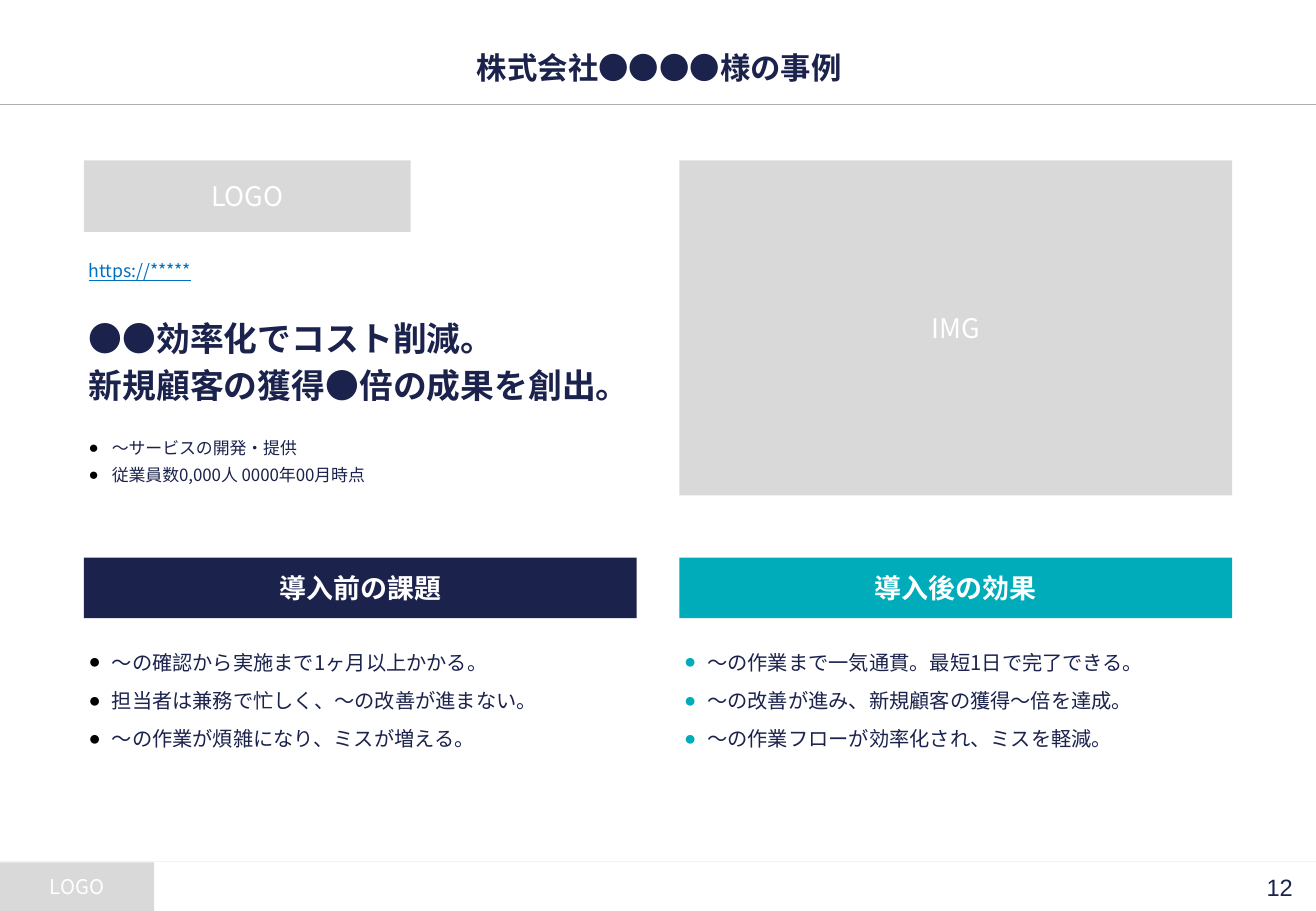
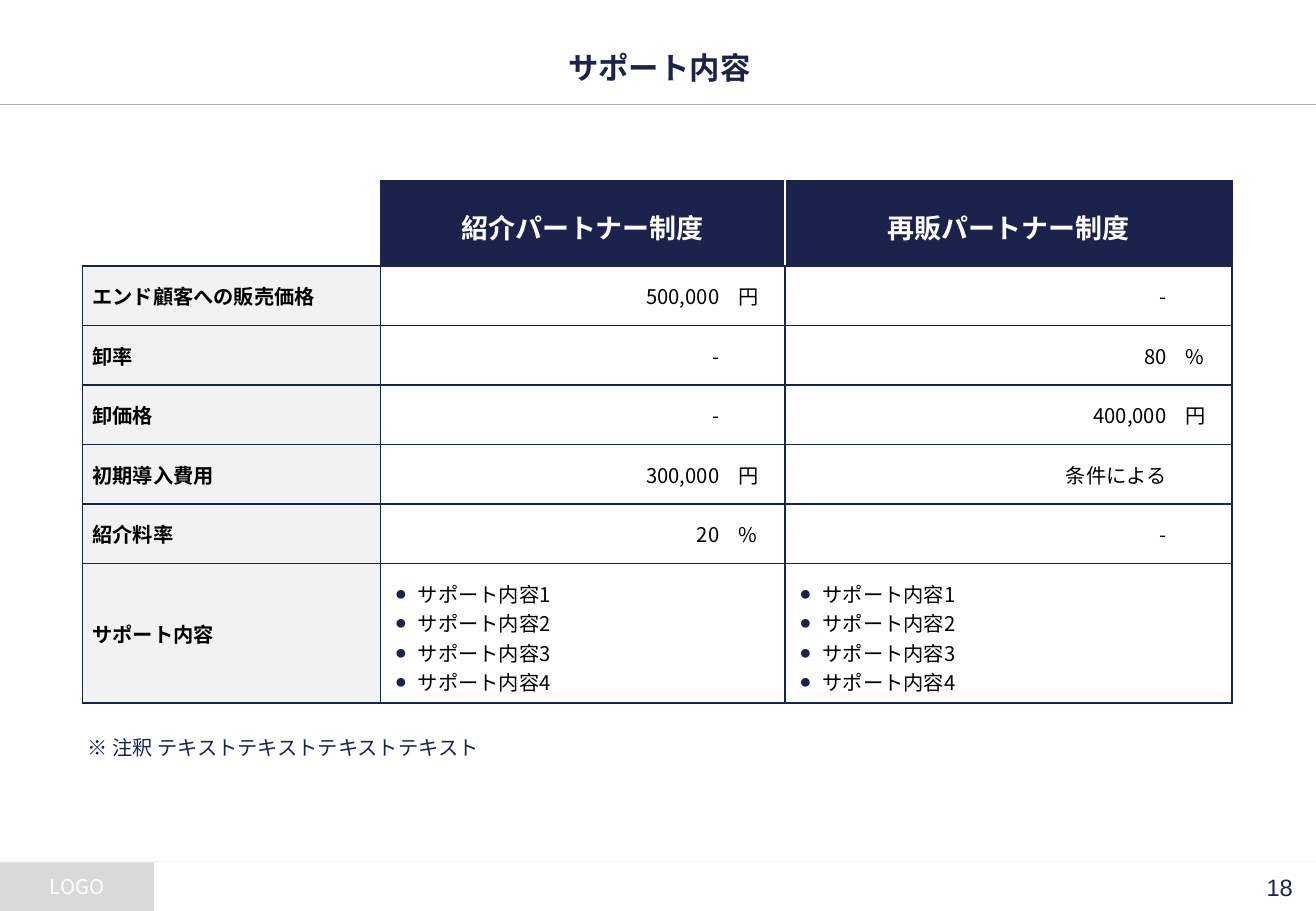
from dataclasses import dataclass

from pptx import Presentation
from pptx.dml.color import RGBColor
from pptx.enum.shapes import MSO_CONNECTOR as Line, MSO_SHAPE as Shape
from pptx.enum.text import MSO_ANCHOR as Anchor, PP_ALIGN as Align
from pptx.oxml.ns import qn
from pptx.util import Pt
from lxml.etree import SubElement

SCALE = 9144  # EMU in one px, 100 px to the inch
WIDTH, HEIGHT = 1083, 750
NO_STYLE = "{2D5ABB26-0587-4C30-8999-92F81FD0307C}"


@dataclass(frozen=True)
class Theme:
    navy: str = "1B224C"
    teal: str = "00ACBA"
    link: str = "0070C0"
    black: str = "000000"
    white: str = "FFFFFF"
    placeholder: str = "D9D9D9"
    label: str = "F2F2F2"
    rule: str = "AFAFAF"
    font: str = "Noto Sans CJK JP"
    number_font: str = "Arial"
    title: float = 18
    headline: float = 20
    heading: float = 16
    number: float = 14
    body: float = 12
    url: float = 10.5
    small: float = 10


T = Theme()


def px(length):
    return length * SCALE


def rgb(color):
    return RGBColor.from_string(color)


class Deck:
    def __init__(self):
        self.prs = Presentation()
        self.prs.slide_width, self.prs.slide_height = px(WIDTH), px(HEIGHT)
        self.slide = None

    # Shared frame: title, rules, footer
    def new_slide(self, title, number):
        self.slide = self.prs.slides.add_slide(self.prs.slide_layouts[6])
        self.rule(709, T.label)
        self.box((0, 710, 127, 40), T.placeholder, "LOGO", T.body)
        self.rule(86, T.rule)
        self.text((890, 710, 194, 40), [number], size=T.number, font=T.number_font,
                  align=Align.RIGHT, anchor=Anchor.MIDDLE, inset=(8, 8, 20, 8))
        self.text((70, 34, 945, 43), [title], size=T.title, bold=True,
                  align=Align.CENTER, anchor=Anchor.MIDDLE)

    def rule(self, y, color):
        line = self.slide.shapes.add_connector(Line.STRAIGHT, 0, px(y), px(WIDTH), px(y))
        line.line.color.rgb = rgb(color)
        line.line.width = Pt(0.75)
        SubElement(line._element.spPr, qn("a:effectLst"))

    def box(self, area, fill, label, size, bold=False):
        shape = self.slide.shapes.add_shape(Shape.RECTANGLE, *map(px, area))
        shape.shadow.inherit = False
        shape.fill.solid()
        shape.fill.fore_color.rgb = rgb(fill)
        shape.line.fill.background()
        shape.text_frame.word_wrap = True
        self.fit(shape.text_frame, (4, 4, 4, 4), Anchor.MIDDLE)
        self.add_lines(shape.text_frame, [label], size=size, color=T.white, bold=bold,
                       align=Align.CENTER)

    def text(self, area, lines, anchor=Anchor.TOP, inset=(4, 4, 4, 4), **style):
        frame = self.slide.shapes.add_textbox(*map(px, area)).text_frame
        frame.word_wrap = True
        self.fit(frame, inset, anchor)
        self.add_lines(frame, lines, **style)

    @staticmethod
    def fit(target, inset, anchor):
        """Set insets and anchor of a text frame or a table cell."""
        (target.margin_left, target.margin_top,
         target.margin_right, target.margin_bottom) = map(px, inset)
        target.vertical_anchor = anchor

    def add_lines(self, frame, lines, size=T.body, color=T.navy, bold=False,
                  underline=False, font=T.font, align=Align.LEFT, bullet=None,
                  spacing=None, after=0):
        for i, line in enumerate(lines):
            para = frame.add_paragraph() if i else frame.paragraphs[0]
            para.alignment = align
            para.space_after = Pt(after)
            if spacing:
                para.line_spacing = spacing
            if bullet:
                self.bullet(para, bullet)
            run = para.add_run()
            run.text = line
            face = run.font
            face.size, face.bold, face.underline = Pt(size), bold, underline
            face.color.rgb = rgb(color)
            face.name = font
            east = SubElement(run._r.rPr, qn("a:ea"), typeface=T.font)
            run._r.rPr.find(qn("a:latin")).addnext(east)

    @staticmethod
    def bullet(para, color):
        props = para._p.get_or_add_pPr()
        props.set("marL", str(px(19)))
        props.set("indent", str(px(-19)))
        SubElement(SubElement(props, qn("a:buClr")), qn("a:srgbClr"), val=color)
        SubElement(props, qn("a:buFont"), typeface=T.number_font)
        SubElement(props, qn("a:buChar"), char="●")

    # Tables
    def table(self, area, widths, heights):
        holder = self.slide.shapes.add_table(len(heights), len(widths), *map(px, area))
        table = holder.table
        table.first_row = table.horz_banding = False
        table._tbl.tblPr.find(qn("a:tableStyleId")).text = NO_STYLE
        for column, width in zip(table.columns, widths):
            column.width = px(width)
        for row, height in zip(table.rows, heights):
            row.height = px(height)
        return table

    def cell(self, cell, lines, borders, fill=None, inset=(8, 12, 8, 12), **style):
        """Fill a cell; borders maps a side (L, R, T, B) to a colour."""
        props = cell._tc.get_or_add_tcPr()
        for side in "LRTB":
            line = SubElement(props, qn(f"a:ln{side}"), w=str(Pt(1)))
            if side in borders:
                paint = SubElement(line, qn("a:solidFill"))
                SubElement(paint, qn("a:srgbClr"), val=borders[side])
            else:
                SubElement(line, qn("a:noFill"))
        if fill:
            cell.fill.solid()
            cell.fill.fore_color.rgb = rgb(fill)
        else:
            cell.fill.background()
        if lines:
            self.fit(cell, inset, Anchor.MIDDLE)
            self.add_lines(cell.text_frame, lines, **style)


def navy(sides):
    return dict.fromkeys(sides, T.navy)


def case_study(deck):
    deck.new_slide("株式会社●●●●様の事例", "12")
    left, right, column = 69, 559, 455

    # Before and after
    comparison = [
        (left, "導入前の課題", T.navy, T.black,
         ["〜の確認から実施まで1ヶ月以上かかる。",
          "担当者は兼務で忙しく、〜の改善が進まない。",
          "〜の作業が煩雑になり、ミスが増える。"]),
        (right, "導入後の効果", T.teal, T.teal,
         ["〜の作業まで一気通貫。最短1日で完了できる。",
          "〜の改善が進み、新規顧客の獲得〜倍を達成。",
          "〜の作業フローが効率化され、ミスを軽減。"]),
    ]
    for x, heading, fill, dot, points in comparison:
        deck.box((x, 459, column, 50), fill, heading, T.heading, bold=True)
        deck.text((x, 525, column, 96), points, bullet=dot, spacing=1.3, after=4)

    # Customer profile
    deck.box((left, 132, 269, 59), T.placeholder, "LOGO", T.heading)
    deck.box((right, 132, column, 276), T.placeholder, "IMG", T.heading)
    deck.text((left, 241, column, 113),
              ["●●効率化でコスト削減。", "新規顧客の獲得●倍の成果を創出。"],
              size=T.headline, bold=True, anchor=Anchor.MIDDLE, after=4)
    deck.text((left, 210, column, 31), ["https://*****"],
              size=T.url, color=T.link, underline=True)
    deck.text((left, 356, column, 50),
              ["〜サービスの開発・提供", "従業員数0,000人 0000年00月時点"],
              size=T.small, bullet=T.black, after=4)


def support(deck):
    deck.new_slide("サポート内容", "18")
    deck.text((68, 601, 946, 28), ["※ 注釈 テキストテキストテキストテキスト"])

    prices = [
        ("エンド顧客への販売価格", "500,000", "円", "-", ""),
        ("卸率", "-", "", "80", "%"),
        ("卸価格", "-", "", "400,000", "円"),
        ("初期導入費用", "300,000", "円", "条件による", ""),
        ("紹介料率", "20", "%", "-", ""),
    ]
    services = [f"サポート内容{n}" for n in range(1, 5)]
    last = len(prices) + 1
    table = deck.table((68, 149, 946, 428), [245, 287, 46, 322, 46],
                       [70] + [49] * len(prices) + [115])

    # Plan headings and services, each over a value and a unit column
    plans = [(1, "紹介パートナー制度", {"R": T.white}),
             (3, "再販パートナー制度", {"L": T.white})]
    deck.cell(table.cell(0, 0), [], navy("RB"))
    for col, plan, divider in plans:
        for row in (0, last):
            table.cell(row, col).merge(table.cell(row, col + 1))
        edges = navy("LRTB") | divider
        deck.cell(table.cell(0, col), [plan], edges, T.navy, (3, 20, 3, 14),
                  size=T.heading, color=T.white, bold=True,
                  font=T.number_font, align=Align.CENTER)
        deck.cell(table.cell(0, col + 1), [], {s: edges[s] for s in "RTB"}, T.navy)
        deck.cell(table.cell(last, col), services, navy("LRTB"), inset=(12, 12, 12, 5),
                  color=T.black, bullet=T.navy)
        deck.cell(table.cell(last, col + 1), [], navy("RTB"))

    # Row labels
    for row, label in enumerate([p[0] for p in prices] + ["サポート内容"], 1):
        deck.cell(table.cell(row, 0), [label], navy("LRTB"), T.label,
                  color=T.black, bold=True)

    # Values and units
    for row, (_, *entries) in enumerate(prices, 1):
        for col, entry in enumerate(entries, 1):
            is_value = col % 2 == 1
            deck.cell(table.cell(row, col), [entry] if entry else [],
                      navy("LTB" if is_value else "RTB"), color=T.black,
                      align=Align.RIGHT if is_value else Align.LEFT)


def main():
    deck = Deck()
    case_study(deck)
    support(deck)
    deck.prs.save("out.pptx")


if __name__ == "__main__":
    main()
